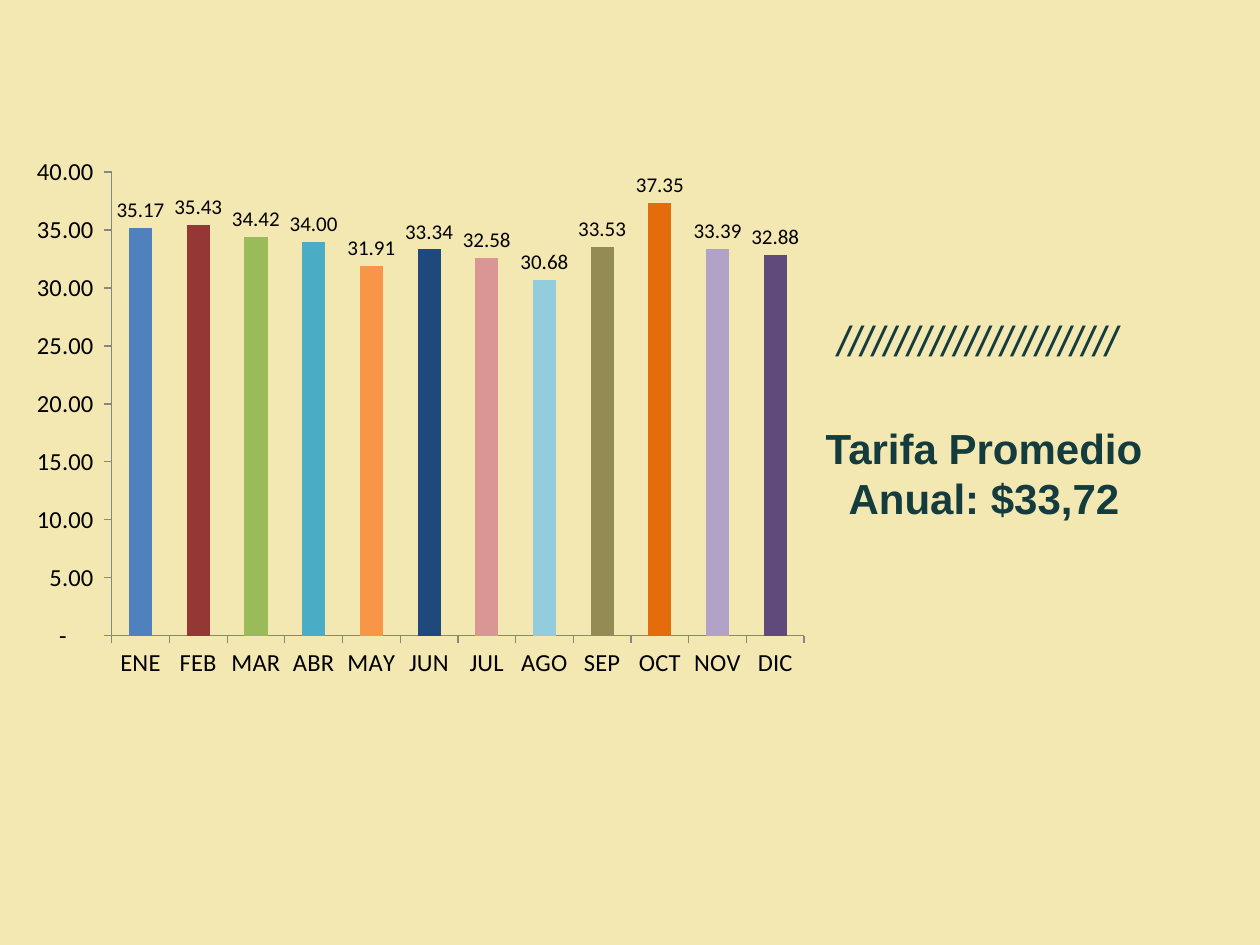
import pptx
import pptx.chart.data
import pptx.dml.color
import pptx.enum.chart
import pptx.enum.shapes
import pptx.enum.text
import pptx.oxml
import pptx.oxml.ns
import pptx.util

Inches, Pt = pptx.util.Inches, pptx.util.Pt
RGB = pptx.dml.color.RGBColor
XL = pptx.enum.chart

# Content
TITLE = "Tarifa Promedio Anual: $33,72"
SLASHES = "/" * 24
RATES = [  # month, rate, bar colour
    ("ENE", 35.17, "4F81BD"), ("FEB", 35.43, "953735"), ("MAR", 34.42, "9BBB59"),
    ("ABR", 34.00, "4BACC6"), ("MAY", 31.91, "F79646"), ("JUN", 33.34, "1F497D"),
    ("JUL", 32.58, "D99694"), ("AGO", 30.68, "93CDDD"), ("SEP", 33.53, "948A54"),
    ("OCT", 37.35, "E46C0A"), ("NOV", 33.39, "B3A2C7"), ("DIC", 32.88, "604A7B"),
]
ACCOUNTING = r'_(* #,##0.00_);_(* \(#,##0.00\);_(* "-"??_);_(@_)'

# Colours and formats
BASE = RGB(0xEE, 0xEC, 0xE1)
SAND = RGB(0xF3, 0xE7, 0xB2)
TEAL = RGB(0x14, 0x3C, 0x3E)
BLACK = RGB(0, 0, 0)
GREY = RGB(0x86, 0x86, 0x86)
TITLE_FONT = {"name": "Arial", "size": Pt(24), "bold": True, "italic": False}
SLASH_FONT = {"name": "Arial", "size": Pt(24), "bold": False, "italic": True}
AXIS_FONT = {"name": "Calibri", "size": Pt(14)}
LABEL_FONT = {"name": "Calibri", "size": Pt(12)}

# Boxes: left, top, width, height
PANEL_BOX = (-0.04, 0, 10.04, 7.5)
SLASH_BOX = (6.55, 2.45, 2.64, 0.85)
CHART_BOX = (0.12, 1.15, 6.39, 4.33)
TITLE_BOX = (6.11, 3.3, 3.4, 0.91)
PLOT = {"x": 0.12, "y": 0.05, "w": 0.86, "h": 0.85}  # shares of the chart


def box(values):
    return [Inches(v) for v in values]


def set_font(font, formats, color):
    for name, value in formats.items():
        setattr(font, name, value)
    font.color.rgb = color


def write(sp, text, formats, align):
    tf = sp.text_frame
    tf.word_wrap = True
    tf.auto_size = pptx.enum.text.MSO_AUTO_SIZE.NONE
    tf.vertical_anchor = pptx.enum.text.MSO_ANCHOR.TOP
    p = tf.paragraphs[0]
    p.alignment = align
    r = p.add_run()
    r.text = text
    set_font(r.font, formats, TEAL)


def set_plot_layout(chart):
    plot_area = chart._chartSpace.chart.plotArea
    for old in plot_area.findall(pptx.oxml.ns.qn("c:layout")):
        plot_area.remove(old)
    modes = "".join(f'<c:{k}Mode val="edge"/>' for k in "xy")
    sizes = "".join(f'<c:{k} val="{v}"/>' for k, v in PLOT.items())
    plot_area.insert(0, pptx.oxml.parse_xml(
        f'<c:layout {pptx.oxml.ns.nsdecls("c")}><c:manualLayout>'
        f'<c:layoutTarget val="inner"/>{modes}{sizes}</c:manualLayout></c:layout>'))


def add_rate_chart(s):
    months, rates, colors = zip(*RATES)
    data = pptx.chart.data.CategoryChartData(number_format=ACCOUNTING)
    data.categories = months
    data.add_series("Series 1", rates)
    chart = s.shapes.add_chart(
        XL.XL_CHART_TYPE.COLUMN_CLUSTERED, *box(CHART_BOX), data).chart
    chart.has_legend = chart.has_title = False
    set_font(chart.font, AXIS_FONT, BLACK)
    set_plot_layout(chart)

    # Axes
    for axis in (chart.category_axis, chart.value_axis):
        axis.has_major_gridlines = False
        axis.major_tick_mark = XL.XL_TICK_MARK.OUTSIDE
        axis.minor_tick_mark = XL.XL_TICK_MARK.NONE
        axis.format.line.color.rgb = GREY
        axis.format.line.width = Pt(0.75)
    axis = chart.value_axis
    axis.minimum_scale, axis.maximum_scale, axis.major_unit = 0, 40, 5
    axis.tick_labels.number_format = ACCOUNTING
    axis.tick_labels.number_format_is_linked = False

    # Bars and their labels
    plot = chart.plots[0]
    plot.gap_width = 150
    plot.vary_by_categories = False
    series = plot.series[0]
    series.invert_if_negative = False
    series.format.fill.solid()
    series.format.fill.fore_color.rgb = RGB.from_string(colors[0])
    for i, color in enumerate(colors[1:], 1):
        fill = series.points[i].format.fill
        fill.solid()
        fill.fore_color.rgb = RGB.from_string(color)
    labels = series.data_labels
    labels.show_value = True
    labels.position = XL.XL_LABEL_POSITION.OUTSIDE_END
    labels.number_format = ACCOUNTING
    labels.number_format_is_linked = False
    set_font(labels.font, LABEL_FONT, BLACK)


def main():
    prs = pptx.Presentation()
    prs.slide_width, prs.slide_height = Inches(10), Inches(7.5)
    s = prs.slides.add_slide(prs.slide_layouts[5])
    s.background.fill.solid()
    s.background.fill.fore_color.rgb = BASE

    # Sand panel
    panel = s.shapes.add_shape(
        pptx.enum.shapes.MSO_SHAPE.RECTANGLE, *box(PANEL_BOX))
    panel.shadow.inherit = False
    panel.fill.solid()
    panel.fill.fore_color.rgb = SAND
    panel.line.fill.background()

    # Row of slashes
    align = pptx.enum.text.PP_ALIGN
    write(s.shapes.add_textbox(*box(SLASH_BOX)), SLASHES, SLASH_FONT, align.LEFT)

    add_rate_chart(s)

    # Title, brought in front of the panel
    title = s.shapes.title
    title.left, title.top, title.width, title.height = box(TITLE_BOX)
    write(title, TITLE, TITLE_FONT, align.CENTER)
    s.shapes._spTree.append(title._element)

    prs.save("out.pptx")


if __name__ == "__main__":
    main()
